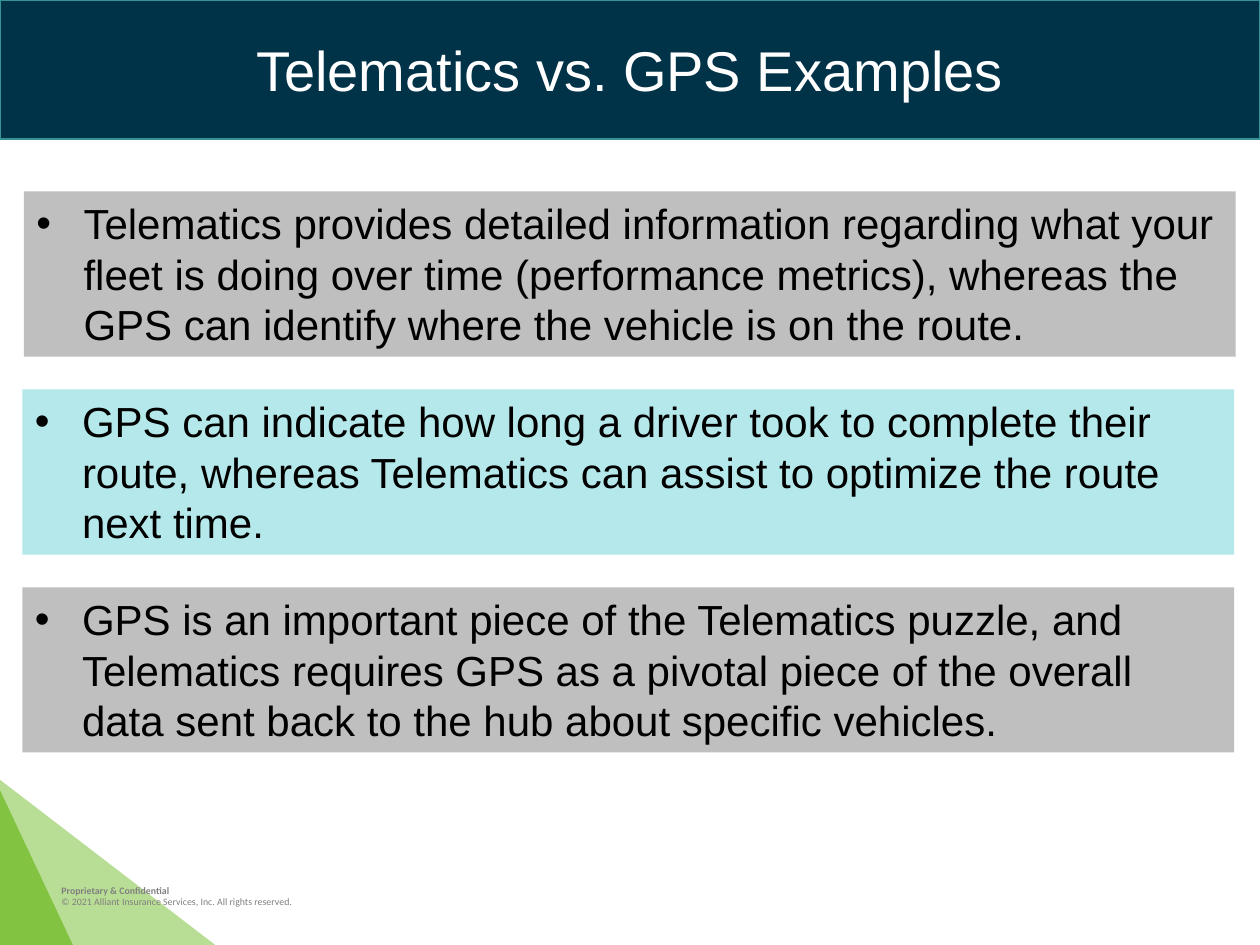
from pptx import Presentation
from pptx.dml.color import RGBColor
from pptx.enum.shapes import MSO_SHAPE
from pptx.enum.text import MSO_ANCHOR, MSO_AUTO_SIZE, PP_ALIGN
from pptx.oxml.ns import qn
from pptx.util import Cm, Pt
from lxml.etree import SubElement

COLORS = {
    "navy": "003248", "teal": "359295", "gray": "BFBFBF", "aqua": "B5E8EA",
    "green": "82C341", "note": "808080", "white": "FFFFFF", "black": "000000",
}
POINTS = [
    ("Telematics provides detailed information regarding what your fleet is "
     "doing over time (performance metrics), whereas the GPS can identify "
     "where the vehicle is on the route.", 0.48, "gray"),
    ("GPS can indicate how long a driver took to complete their route, whereas "
     "Telematics can assist to optimize the route next time.", 0.45, "aqua"),
    ("GPS is an important piece of the Telematics puzzle, and Telematics "
     "requires GPS as a pivotal piece of the overall data sent back to the hub "
     "about specific vehicles.", 0.45, "gray"),
]


def rgb(name):
    return RGBColor.from_string(COLORS[name])


class Deck:
    """Holds the text style and the current slide."""

    def __init__(self, slide, font="Arial"):
        self.slide = slide
        self.font = font

    def place(self, shape, box):
        shape.left, shape.top, shape.width, shape.height = map(Cm, box)

    def fill(self, shape, color):
        shape.fill.solid()
        shape.fill.fore_color.rgb = rgb(color)

    def style(self, para, size, color, font=None, bold=False):
        for run in para.runs:
            run.font.name = font or self.font
            run.font.size = Pt(size)
            run.font.bold = bold
            run.font.color.rgb = rgb(color)

    def title(self, text, box):
        shape = self.slide.shapes.title
        self.place(shape, box)
        self.fill(shape, "navy")
        shape.line.color.rgb = rgb("teal")
        shape.line.width = Pt(1)
        frame = shape.text_frame
        frame.text = text
        frame.vertical_anchor = MSO_ANCHOR.MIDDLE
        frame.paragraphs[0].alignment = PP_ALIGN.CENTER
        self.style(frame.paragraphs[0], 32, "white")

    def point(self, shape, text, box, color):
        """Turn a body placeholder into a filled box with one bullet."""
        self.place(shape, box)
        self.fill(shape, color)
        frame = shape.text_frame
        frame.text = text
        frame.auto_size = MSO_AUTO_SIZE.NONE
        frame.vertical_anchor = MSO_ANCHOR.TOP
        para = frame.paragraphs[0]
        para.space_before = Pt(0)
        props = para._p.get_or_add_pPr()
        props.set("marL", str(Cm(0.95)))
        props.set("indent", str(Cm(-0.95)))
        SubElement(props, qn("a:buFont"), typeface="Arial")
        SubElement(props, qn("a:buChar"), char="•")
        self.style(para, 24, "black")

    def corner(self, box, color, alpha=100):
        shape = self.slide.shapes.add_shape(
            MSO_SHAPE.RIGHT_TRIANGLE, *map(Cm, box))
        shape.shadow.inherit = False
        self.fill(shape, color)
        shape.line.fill.background()
        if alpha < 100:
            tint = shape.fill._xPr.find(".//" + qn("a:srgbClr"))
            SubElement(tint, qn("a:alpha"), val=str(alpha * 1000))

    def footer(self, lines, box):
        frame = self.slide.shapes.add_textbox(*map(Cm, box)).text_frame
        frame.word_wrap = True
        frame.text = "\n".join(lines)
        for i, para in enumerate(frame.paragraphs):
            self.style(para, 5.6, "note", "Calibri", bold=i == 0)


def main():
    prs = Presentation()
    prs.slide_width, prs.slide_height = Cm(25.4), Cm(19.05)
    slide = prs.slides.add_slide(prs.slide_layouts.get_by_name("Comparison"))
    deck = Deck(slide)

    deck.title("Telematics vs. GPS Examples", (0, 0, 25.4, 2.8))
    *bodies, spare = list(slide.placeholders)[1:5]
    spare.element.getparent().remove(spare.element)
    for i, (body, (text, left, color)) in enumerate(zip(bodies, POINTS)):
        deck.point(body, text, (left, 3.86 + i * 3.99, 24.43, 3.33), color)

    deck.corner((0, 15.72, 4.34, 3.33), "green", 56)
    deck.corner((0, 15.93, 1.47, 3.12), "green")
    deck.footer(["Proprietary & Confidential",
                 "© 2021 Alliant Insurance Services, Inc. All rights reserved."],
                (0.99, 17.7, 7.7, 0.74))
    prs.save("out.pptx")


if __name__ == "__main__":
    main()
